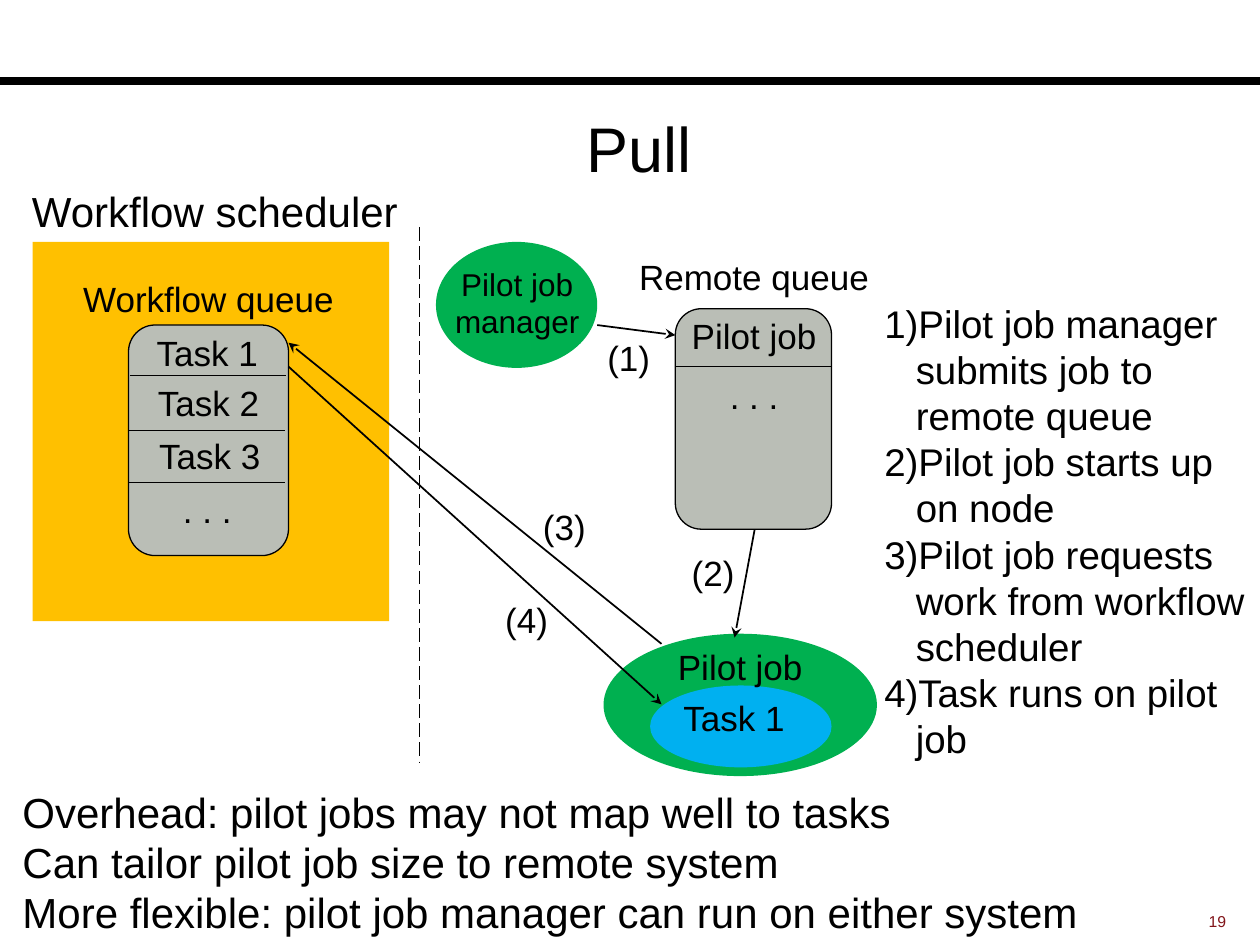
from lxml import etree
from pptx import Presentation
from pptx.dml.color import RGBColor
from pptx.enum.dml import MSO_LINE
from pptx.enum.shapes import MSO_CONNECTOR, MSO_SHAPE
from pptx.enum.text import MSO_ANCHOR, PP_ALIGN
from pptx.oxml.ns import qn
from pptx.util import Inches, Pt

STRAIGHT = MSO_CONNECTOR.STRAIGHT
LONG_DASH = MSO_LINE.LONG_DASH
OVAL, RECTANGLE, ROUNDED = MSO_SHAPE.OVAL, MSO_SHAPE.RECTANGLE, MSO_SHAPE.ROUNDED_RECTANGLE
TOP, MIDDLE = MSO_ANCHOR.TOP, MSO_ANCHOR.MIDDLE
LEFT, CENTER, RIGHT = PP_ALIGN.LEFT, PP_ALIGN.CENTER, PP_ALIGN.RIGHT

BLACK, GREEN, BLUE = "000000", "00B050", "00B0F0"
GRAY, ORANGE, RED = "BABEB6", "FFC000", "82151A"
LABEL_HEIGHT = 0.44
CELL_WIDTH = 1.25
STEP_WIDTH = 0.6

STEPS = [
    "Pilot job manager submits job to remote queue",
    "Pilot job starts up on node",
    "Pilot job requests work from workflow scheduler",
    "Task runs on pilot job",
]
REMARKS = [
    "Overhead: pilot jobs may not map well to tasks",
    "Can tailor pilot job size to remote system",
    "More flexible: pilot job manager can run on either system",
]


def color(value):
    return RGBColor.from_string(value)


def add_block(page, kind, place, fill, outlined=False):
    block = page.shapes.add_shape(kind, *map(Inches, place))
    block.shadow.inherit = False
    block.fill.solid()
    block.fill.fore_color.rgb = color(fill)
    if outlined:
        block.line.color.rgb = color(BLACK)
        block.line.width = Pt(0.75)
    else:
        block.line.fill.background()


def add_line(page, start, end, width=1, dash=None, arrow=False):
    line = page.shapes.add_connector(STRAIGHT, *map(Inches, (*start, *end)))
    line.line.color.rgb = color(BLACK)
    line.line.width = Pt(width)
    if dash:
        line.line.dash_style = dash
    properties = line._element.spPr
    if arrow:
        etree.SubElement(properties.find(qn("a:ln")), qn("a:tailEnd"), type="stealth")
    etree.SubElement(properties, qn("a:effectLst"))


def number_paragraph(para):
    properties = para._p.get_or_add_pPr()
    properties.set("marL", str(Inches(0.25)))
    properties.set("indent", str(Inches(-0.25)))
    etree.SubElement(properties, qn("a:buAutoNum"), type="arabicParenR")


def add_text(page, lines, place, size=20, align=CENTER, fill=BLACK, anchor=TOP, numbered=False):
    frame = page.shapes.add_textbox(*map(Inches, place)).text_frame
    frame.word_wrap = True
    frame.vertical_anchor = anchor
    font_format = {"name": "Arial", "size": Pt(size)}
    for index, line in enumerate(lines):
        para = frame.add_paragraph() if index else frame.paragraphs[0]
        para.alignment = align
        if numbered:
            number_paragraph(para)
        span = para.add_run()
        span.text = line
        for font in (para.font, span.font):
            for name, value in font_format.items():
                setattr(font, name, value)
            font.color.rgb = color(fill)


def add_label(page, text, left, top, width=CELL_WIDTH):
    add_text(page, [text], (left, top, width, LABEL_HEIGHT))


def add_workflow_scheduler(page):
    add_text(page, ["Workflow scheduler"], (0.08, 1.42, 3.25, 0.5), size=24)
    add_block(page, RECTANGLE, (0.26, 1.92, 2.83, 3.01), ORANGE)
    add_label(page, "Workflow queue", 0.24, 2.15, 2.83)
    add_block(page, ROUNDED, (1.02, 2.58, 1.27, 1.83), GRAY, outlined=True)
    rows = [("Task 1", 1.02, 2.58), ("Task 2", 1.03, 2.98), ("Task 3", 1.04, 3.4), (". . .", 1.02, 3.83)]
    for text, left, top in rows:
        add_label(page, text, left, top)
    for left, top in [(1.03, 2.98), (1.02, 3.42), (1.02, 3.83)]:
        add_line(page, (left, top), (left + 1.24, top), width=0.5)


def add_remote_system(page):
    # Pilot job manager
    add_block(page, OVAL, (3.46, 1.92, 1.28, 1), GREEN)
    add_text(page, ["Pilot job manager"], (3.42, 2.05, 1.37, 0.71), size=18)

    # Remote queue
    add_label(page, "Remote queue", 4.57, 1.98, 2.83)
    add_block(page, ROUNDED, (5.36, 2.45, 1.24, 1.75), GRAY, outlined=True)
    add_label(page, "Pilot job", 5.36, 2.45)
    add_line(page, (5.36, 2.91), (6.6, 2.91), width=0.5)
    add_label(page, ". . .", 5.36, 2.92)

    # Running pilot job with its task
    add_block(page, OVAL, (4.79, 5.03, 2.17, 1.13), GREEN)
    add_block(page, OVAL, (5.16, 5.44, 1.44, 0.65), BLUE)
    add_label(page, "Pilot job", 5.25, 5.07)
    add_label(page, "Task 1", 5.2, 5.48)


def add_step_arrows(page):
    arrows = [
        ((4.74, 2.58), (5.36, 2.66), (4.69, 2.62)),
        ((5.99, 4.2), (5.83, 5.06), (5.36, 4.33)),
        ((5.25, 5.11), (2.29, 2.72), (4.18, 3.96)),
        ((2.29, 2.91), (5.25, 5.59), (3.88, 4.7)),
    ]
    for number, (start, end, label) in enumerate(arrows, 1):
        add_line(page, start, end, arrow=True)
        add_label(page, f"({number})", *label, STEP_WIDTH)


def main():
    deck = Presentation()
    deck.slide_width, deck.slide_height = Inches(10), Inches(7.5)
    page = deck.slides.add_slide(deck.slide_layouts[6])

    # Header and page number
    add_line(page, (0, 0.64), (10, 0.64), width=4.5)
    add_text(page, ["Pull"], (0.2, 0.67, 9.75, 1), size=36, anchor=MIDDLE)
    add_text(page, ["19"], (8.75, 7.19, 1.08, 0.25), size=9, align=RIGHT, fill=RED)

    # Diagram
    add_workflow_scheduler(page)
    add_line(page, (3.33, 1.8), (3.33, 6.05), dash=LONG_DASH)
    add_remote_system(page)
    add_step_arrows(page)

    # Explanations
    add_text(page, STEPS, (6.92, 2.33, 3.17, 3.8), size=22, align=LEFT, numbered=True)
    add_text(page, REMARKS, (0.08, 6.19, 9.08, 1.31), size=24, align=LEFT)

    deck.save("out.pptx")


if __name__ == "__main__":
    main()
